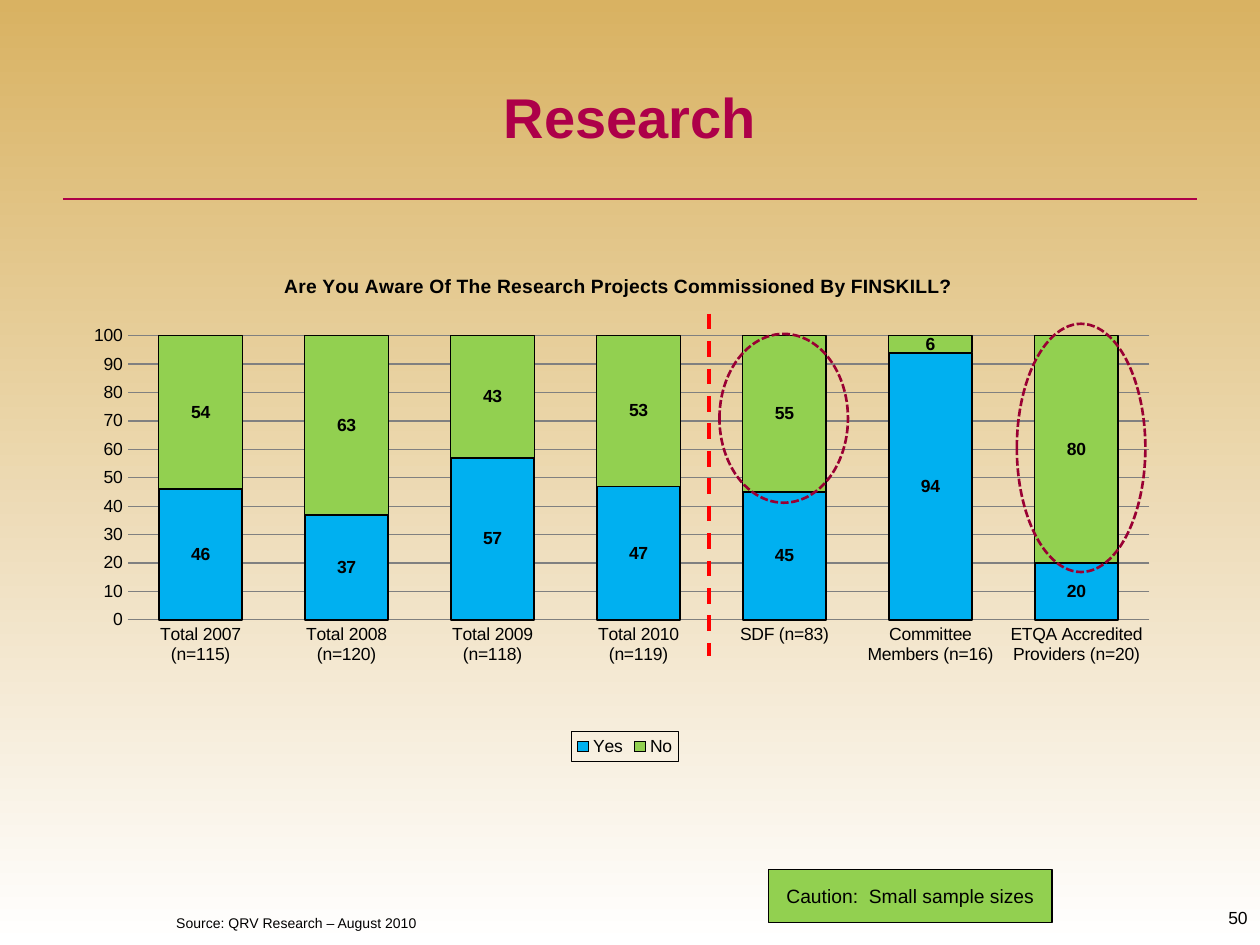
from lxml import etree
from pptx import Presentation
from pptx import util as u
from pptx.chart import data
from pptx.dml import color
from pptx.enum import chart as ch, dml, shapes, text
from pptx.oxml import ns

THEME = {
    "font": "Arial", "gold": "D9B262", "white": "FFFFFF", "wine": "AD0049",
    "ring": "990033", "red": "FF0000", "blue": "00B0F0", "green": "92D050",
    "black": "000000", "grid": "808080",
    "head": 32, "label": 11, "small": 10, "note": 8,
}


def style(font, size, tone="black", bold=False):
    font.name, font.size, font.bold = THEME["font"], u.Pt(THEME[size]), bold
    font.color.rgb = color.RGBColor.from_string(THEME[tone])


def place(parent, index, inner=False, **spots):
    """Give a chart part a fixed place, in fractions of the chart."""
    for old in parent.findall(ns.qn("c:layout")):
        parent.remove(old)
    layout = etree.Element(ns.qn("c:layout"))
    manual = etree.SubElement(layout, ns.qn("c:manualLayout"))
    if inner:
        etree.SubElement(manual, ns.qn("c:layoutTarget")).set("val", "inner")
    for key in ("xMode", "yMode"):
        etree.SubElement(manual, ns.qn("c:" + key)).set("val", "edge")
    for key, val in spots.items():
        etree.SubElement(manual, ns.qn("c:" + key)).set("val", str(val))
    parent.insert(index, layout)


rgb = {k: color.RGBColor.from_string(v) for k, v in THEME.items()
       if isinstance(v, str) and k != "font"}

prs = Presentation()
prs.slide_width, prs.slide_height = u.Inches(10), u.Inches(7.5)
slide = prs.slides.add_slide(prs.slide_layouts[5])

# Background
fill = slide.background.fill
fill.gradient()
fill.gradient_angle = 270
for stop, tone in zip(fill.gradient_stops, ("gold", "white")):
    stop.color.rgb = rgb[tone]

# Title
title = slide.shapes.title
title.left, title.top = u.Inches(0.5), u.Inches(0.3)
title.width, title.height = u.Inches(9), u.Inches(1.25)
title.text_frame.vertical_anchor = text.MSO_ANCHOR.MIDDLE
para = title.text_frame.paragraphs[0]
para.alignment = text.PP_ALIGN.CENTER
run = para.add_run()
run.text = "Research"
style(run.font, "head", "wine", True)

# Chart
table = data.CategoryChartData(number_format="0")
table.categories = [
    "Total 2007 (n=115)", "Total 2008 (n=120)", "Total 2009 (n=118)",
    "Total 2010 (n=119)", "SDF (n=83)", "Committee Members (n=16)",
    "ETQA Accredited Providers (n=20)",
]
yes = [46, 37, 57, 47, 45, 94, 20]
table.add_series("Yes", yes)
table.add_series("No", [100 - val for val in yes])
chart = slide.shapes.add_chart(
    ch.XL_CHART_TYPE.COLUMN_STACKED, u.Inches(0.25), u.Inches(1.92),
    u.Inches(9.42), u.Inches(4.33), table).chart
style(chart.font, "small")

chart.has_title = True
run = chart.chart_title.text_frame.paragraphs[0].add_run()
run.text = "Are You Aware Of The Research Projects Commissioned By FINSKILL?"
style(run.font, "label", bold=True)
chart.chart_title.include_in_layout = False
place(chart.chart_title._element, 1, x=0.21, y=0.05)

plot = chart.plots[0]
plot.gap_width, plot.overlap = 75, 100
plot.vary_by_categories = False
for series, tone, width in zip(plot.series, ("blue", "green"), (1, 0.75)):
    series.format.fill.solid()
    series.format.fill.fore_color.rgb = rgb[tone]
    series.format.line.color.rgb = rgb["black"]
    series.format.line.width = u.Pt(width)
    labels = series.data_labels
    labels.show_value = True
    labels.number_format, labels.number_format_is_linked = "0", False
    style(labels.font, "small", bold=True)
area = chart._chartSpace.find(".//" + ns.qn("c:plotArea"))
place(area, 0, inner=True, x=0.081, y=0.172, w=0.861, h=0.521)

for axis in (chart.category_axis, chart.value_axis):
    axis.major_tick_mark = axis.minor_tick_mark = ch.XL_TICK_MARK.NONE
    style(axis.tick_labels.font, "small", bold=axis is chart.value_axis)
chart.category_axis.format.line.color.rgb = rgb["grid"]
axis = chart.value_axis
axis.minimum_scale, axis.maximum_scale, axis.major_unit = 0, 100, 10
axis.tick_labels.number_format = "0"
axis.tick_labels.number_format_is_linked = False
axis.format.line.fill.background()
axis.has_major_gridlines = True
axis.major_gridlines.format.line.color.rgb = rgb["grid"]
axis.major_gridlines.format.line.width = u.Pt(0.75)

chart.has_legend = True
legend = chart.legend
legend.position = ch.XL_LEGEND_POSITION.BOTTOM
legend.include_in_layout = False
style(legend.font, "small")
place(legend._element, 1, x=0.455, y=0.897, w=0.09, h=0.056)
frame = etree.Element(ns.qn("c:spPr"))
edge = etree.SubElement(frame, ns.qn("a:ln"), w=str(u.Pt(0.75)))
paint = etree.SubElement(edge, ns.qn("a:solidFill"))
etree.SubElement(paint, ns.qn("a:srgbClr"), val=THEME["black"])
legend._element.find(ns.qn("c:txPr")).addprevious(frame)

# Rule under the title, and divider between totals and groups
for x1, y1, x2, y2, tone, width, dash in (
        (0.5, 1.58, 9.5, 1.58, "wine", 0.75, None),
        (5.63, 2.49, 5.63, 5.21, "red", 2.25, dml.MSO_LINE.DASH)):
    line = slide.shapes.add_connector(
        shapes.MSO_CONNECTOR.STRAIGHT, u.Inches(x1), u.Inches(y1),
        u.Inches(x2), u.Inches(y2))
    line.line.color.rgb = rgb[tone]
    line.line.width = u.Pt(width)
    line.line.dash_style = dash
    etree.SubElement(line._element.spPr, ns.qn("a:effectLst"))

# Rings around the notable answers
for left, top, height in ((5.71, 2.65, 1.34), (8.07, 2.57, 1.97)):
    ring = slide.shapes.add_shape(
        shapes.MSO_SHAPE.OVAL, u.Inches(left), u.Inches(top),
        u.Inches(1.02), u.Inches(height))
    ring.shadow.inherit = False
    ring.fill.background()
    ring.line.color.rgb = rgb["ring"]
    ring.line.width = u.Pt(1.5)
    ring.line.dash_style = dml.MSO_LINE.SQUARE_DOT

# Caution box
box = slide.shapes.add_shape(
    shapes.MSO_SHAPE.RECTANGLE, u.Inches(6.1), u.Inches(6.9),
    u.Inches(2.25), u.Inches(0.42))
box.shadow.inherit = False
box.fill.solid()
box.fill.fore_color.rgb = rgb["green"]
box.line.color.rgb = rgb["black"]
box.line.width = u.Pt(0.75)
box.text_frame.vertical_anchor = text.MSO_ANCHOR.MIDDLE
para = box.text_frame.paragraphs[0]
para.alignment = text.PP_ALIGN.CENTER
run = para.add_run()
run.text = "Caution:  Small sample sizes"
style(run.font, "label")

# Page number and source
for words, left, top, width, height, size, align, anchor in (
        ("50", 8.42, 7.15, 1.58, 0.35, "small",
         text.PP_ALIGN.RIGHT, text.MSO_ANCHOR.TOP),
        ("Source: QRV Research – August 2010", 1.3, 7.21, 5.75, 0.23, "note",
         text.PP_ALIGN.LEFT, text.MSO_ANCHOR.BOTTOM)):
    note = slide.shapes.add_textbox(
        u.Inches(left), u.Inches(top), u.Inches(width), u.Inches(height))
    note.text_frame.word_wrap = True
    note.text_frame.vertical_anchor = anchor
    para = note.text_frame.paragraphs[0]
    para.alignment = align
    run = para.add_run()
    run.text = words
    style(run.font, size)

# Hanging indent of the source line
props = para._p.get_or_add_pPr()
props.set("marL", str(u.Inches(0.13)))
props.set("indent", str(-u.Inches(0.13)))

prs.save("out.pptx")
